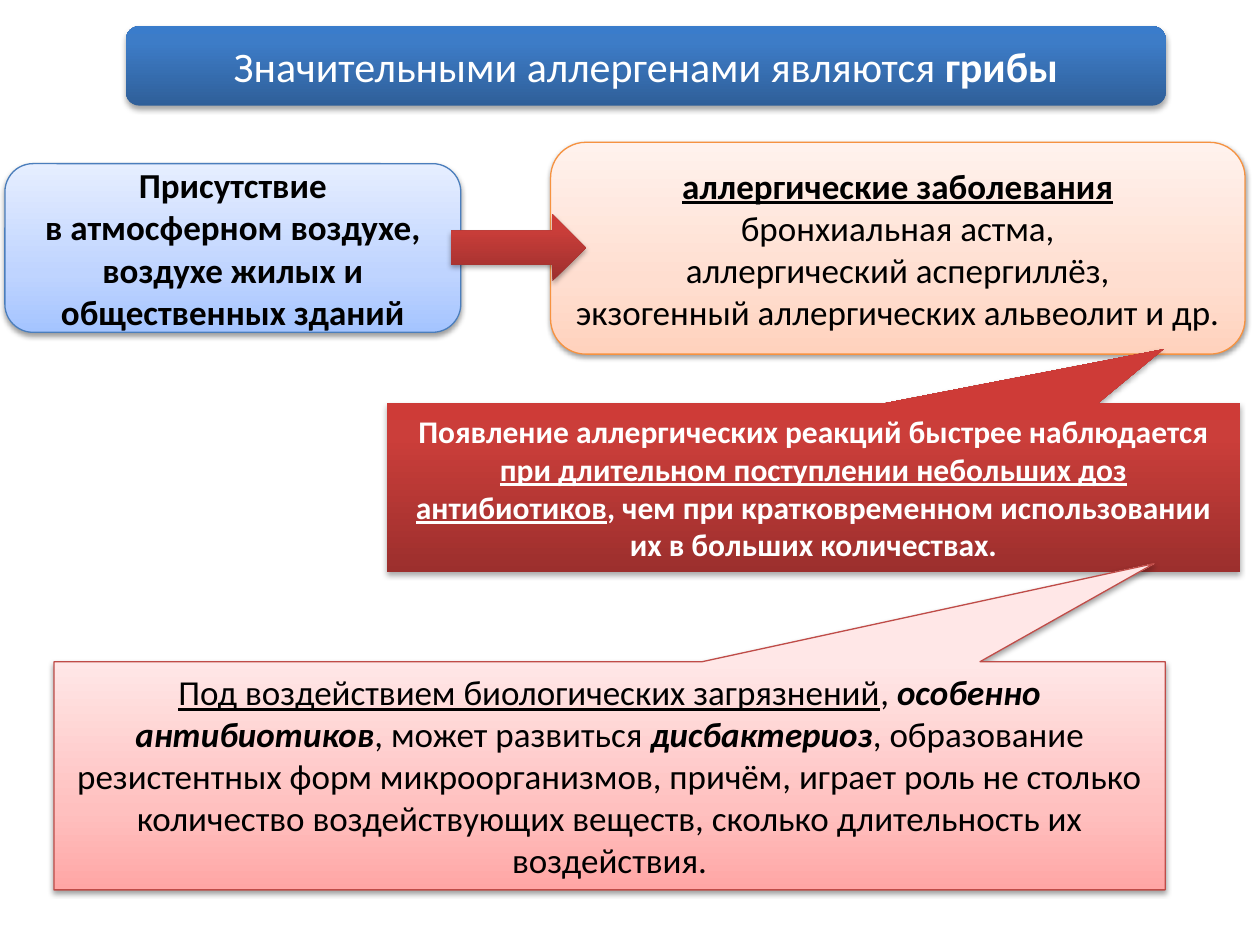
from dataclasses import dataclass

from lxml.etree import SubElement
from pptx import Presentation
from pptx.dml.color import RGBColor
from pptx.enum.shapes import MSO_SHAPE
from pptx.enum.text import MSO_ANCHOR, MSO_AUTO_SIZE, PP_ALIGN
from pptx.oxml.ns import qn
from pptx.util import Cm, Pt


@dataclass(frozen=True)
class Look:
    """Gradient stops, outline and shadow of one kind of shape."""
    stops: tuple
    line: str = ""
    shadow_alpha: int = 38
    shadow_distance: float = 1.6


@dataclass(frozen=True)
class Theme:
    """Colours, type sizes and shape looks of the slide."""
    font: str = "Calibri"
    light: str = "FFFFFF"
    dark: str = "000000"
    title_size: int = 24
    body_size: int = 20
    note_size: int = 18
    blue: Look = Look(((0, "2F5F99"), (80, "3D7CC7"), (100, "3A7CCB")), "", 35, 1.8)
    red: Look = Look(((0, "9C2F2D"), (80, "CB3E3A"), (100, "CE3B37")), "", 35, 1.8)
    pale_blue: Look = Look(((0, "A4C4FF"), (35, "BFD4FF"), (100, "E6EEFF")), "4B7EBC")
    pale_orange: Look = Look(((0, "FFD2BD"), (35, "FFDED0"), (100, "FFF2ED")), "F69240")
    pale_red: Look = Look(((0, "FFA6A5"), (35, "FFC0BF"), (100, "FFE7E7")), "BF4C48")


class SlideBuilder:
    """Draws styled elements on the current slide."""

    def __init__(self, slide, theme):
        """Keep the slide and its theme."""
        self.slide = slide
        self.theme = theme

    def shape(self, kind, box, look, adjustments=()):
        """Add a preset shape with a gradient fill and a soft shadow."""
        shape = self.slide.shapes.add_shape(kind, *map(Cm, box))
        for index, value in enumerate(adjustments):
            shape.adjustments[index] = value
        self.paint(shape, look)
        if look.line:
            shape.line.color.rgb = RGBColor.from_string(look.line)
            shape.line.width = Pt(0.75)
        else:
            shape.line.fill.background()
        self.cast_shadow(shape, look)
        return shape

    def paint(self, shape, look):
        """Fill a shape with a gradient that rises from its bottom edge."""
        shape.fill.gradient()
        stop_list = shape._element.spPr.find(qn("a:gradFill")).find(qn("a:gsLst"))
        for stop in list(stop_list):
            stop_list.remove(stop)
        for position, colour in look.stops:
            stop = SubElement(stop_list, qn("a:gs"), pos=str(position * 1000))
            SubElement(stop, qn("a:srgbClr"), val=colour)
        shape.fill.gradient_angle = 90

    def cast_shadow(self, shape, look):
        """Give a shape a shadow that falls straight down."""
        shape.shadow.inherit = False
        effects = shape._element.spPr.find(qn("a:effectLst"))
        shadow = SubElement(effects, qn("a:outerShdw"), blurRad=str(Pt(3.1)),
                            dist=str(Pt(look.shadow_distance)), dir="5400000", rotWithShape="0")
        colour = SubElement(shadow, qn("a:srgbClr"), val=self.theme.dark)
        SubElement(colour, qn("a:alpha"), val=str(look.shadow_alpha * 1000))

    def set_text(self, shape, paragraphs, size, colour):
        """Set centred paragraphs made of (text, style letters) runs."""
        text_frame = shape.text_frame
        text_frame.word_wrap = True
        text_frame.auto_size = MSO_AUTO_SIZE.NONE
        text_frame.vertical_anchor = MSO_ANCHOR.MIDDLE
        text_frame.text = "\n" * (len(paragraphs) - 1)
        for paragraph, runs in zip(text_frame.paragraphs, paragraphs):
            paragraph.alignment = PP_ALIGN.CENTER
            for text, style in runs:
                run = paragraph.add_run()
                run.text = text
                run.font.name = self.theme.font
                run.font.size = Pt(size)
                run.font.color.rgb = RGBColor.from_string(colour)
                run.font.bold = "b" in style
                run.font.italic = "i" in style
                run.font.underline = "u" in style

    def title(self, box, runs):
        """Place the title placeholder on a rounded banner."""
        banner = self.shape(MSO_SHAPE.ROUNDED_RECTANGLE, box, self.theme.blue)
        title = self.slide.shapes.title
        title.left, title.top, title.width, title.height = map(Cm, box)
        self.set_text(title, [runs], self.theme.title_size, self.theme.light)
        banner._element.addnext(title._element)

    def panel(self, box, look, paragraphs):
        """Add a rounded panel with dark text."""
        panel = self.shape(MSO_SHAPE.ROUNDED_RECTANGLE, box, look)
        self.set_text(panel, paragraphs, self.theme.body_size, self.theme.dark)

    def arrow(self, box):
        """Add a block arrow that points right."""
        self.shape(MSO_SHAPE.RIGHT_ARROW, box, self.theme.red)

    def callout(self, box, look, tip, runs, size, colour):
        """Add a rectangular callout whose tip is relative to its centre."""
        callout = self.shape(MSO_SHAPE.RECTANGULAR_CALLOUT, box, look, tip)
        self.set_text(callout, [runs], size, colour)


def main():
    """Build and save the slide."""
    theme = Theme()
    presentation = Presentation()
    presentation.slide_width, presentation.slide_height = Cm(25.4), Cm(19.05)
    slide = presentation.slides.add_slide(presentation.slide_layouts[5])
    builder = SlideBuilder(slide, theme)

    builder.title((2.54, 0.53, 20.96, 1.6),
                  [("Значительными аллергенами являются ", ""), ("грибы", "b")])
    builder.panel((0.1, 3.3, 9.19, 3.4), theme.pale_blue, [
        [("Присутствие", "b")],
        [("в атмосферном воздухе,", "b")],
        [("воздухе жилых и общественных зданий", "b")],
    ])
    builder.panel((11.1, 2.87, 14, 4.27), theme.pale_orange, [
        [("аллергические заболевания", "bu")],
        [("бронхиальная астма,", "")],
        [("аллергический аспергиллёз,", "")],
        [("экзогенный аллергических альвеолит и др.", "")],
    ])
    builder.arrow((9.09, 4.32, 2.72, 1.35))
    builder.callout((7.8, 8.13, 17.2, 3.4), theme.red, (0.41, -0.82), [
        ("Появление аллергических реакций быстрее наблюдается ", "b"),
        ("при длительном поступлении небольших доз антибиотиков", "bu"),
        (", чем при кратковременном использовании их в больших количествах.", "b"),
    ], theme.note_size, theme.light)
    builder.callout((1.09, 13.34, 22.4, 4.6), theme.pale_red, (0.49, -0.93), [
        ("Под воздействием биологических загрязнений", "u"),
        (", ", ""),
        ("особенно антибиотиков", "bi"),
        (", может развиться ", ""),
        ("дисбактериоз", "bi"),
        (", образование резистентных форм микроорганизмов, причём, играет роль не столько "
         "количество воздействующих веществ, сколько длительность их воздействия.", ""),
    ], theme.body_size, theme.dark)

    presentation.save("out.pptx")


if __name__ == "__main__":
    main()
